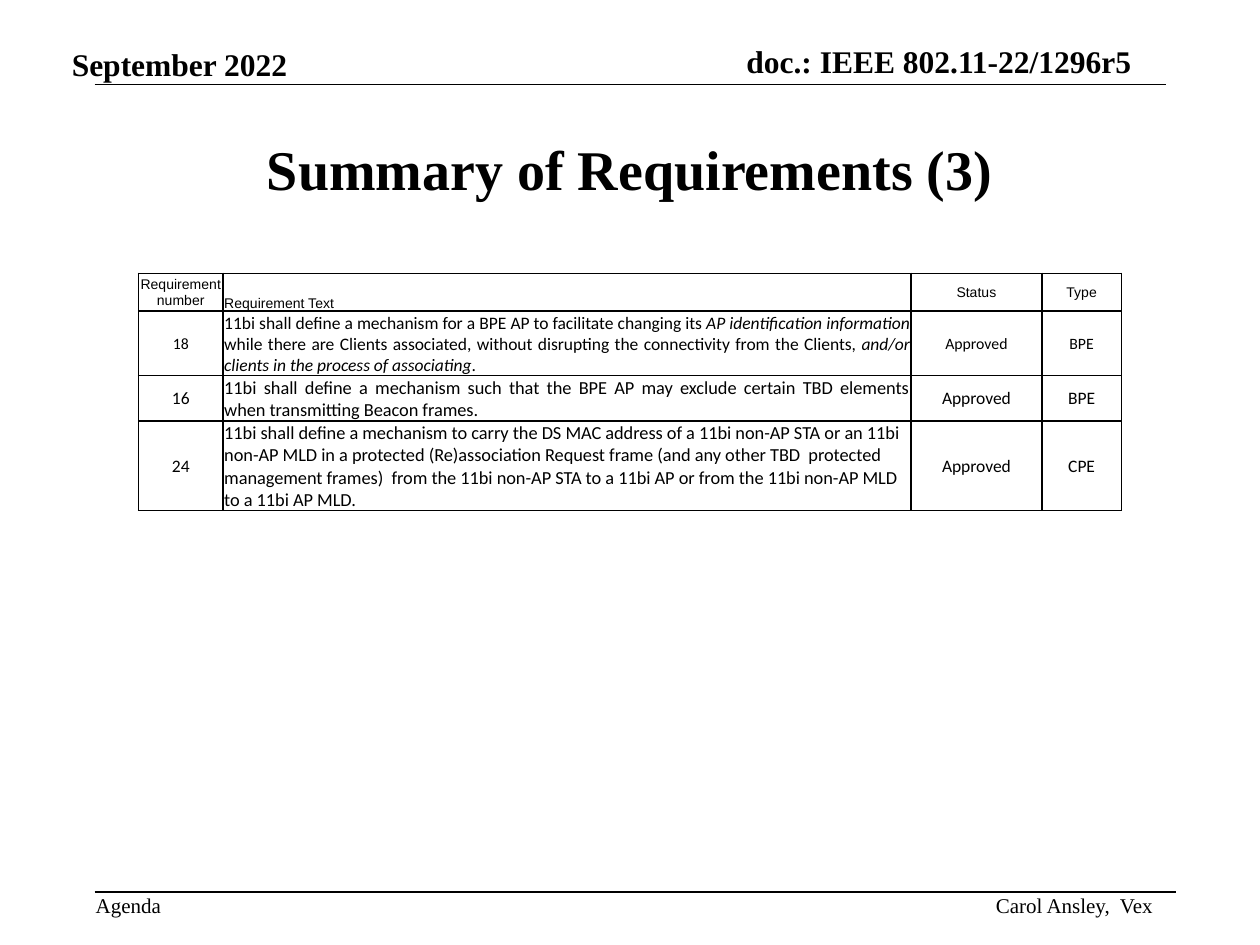
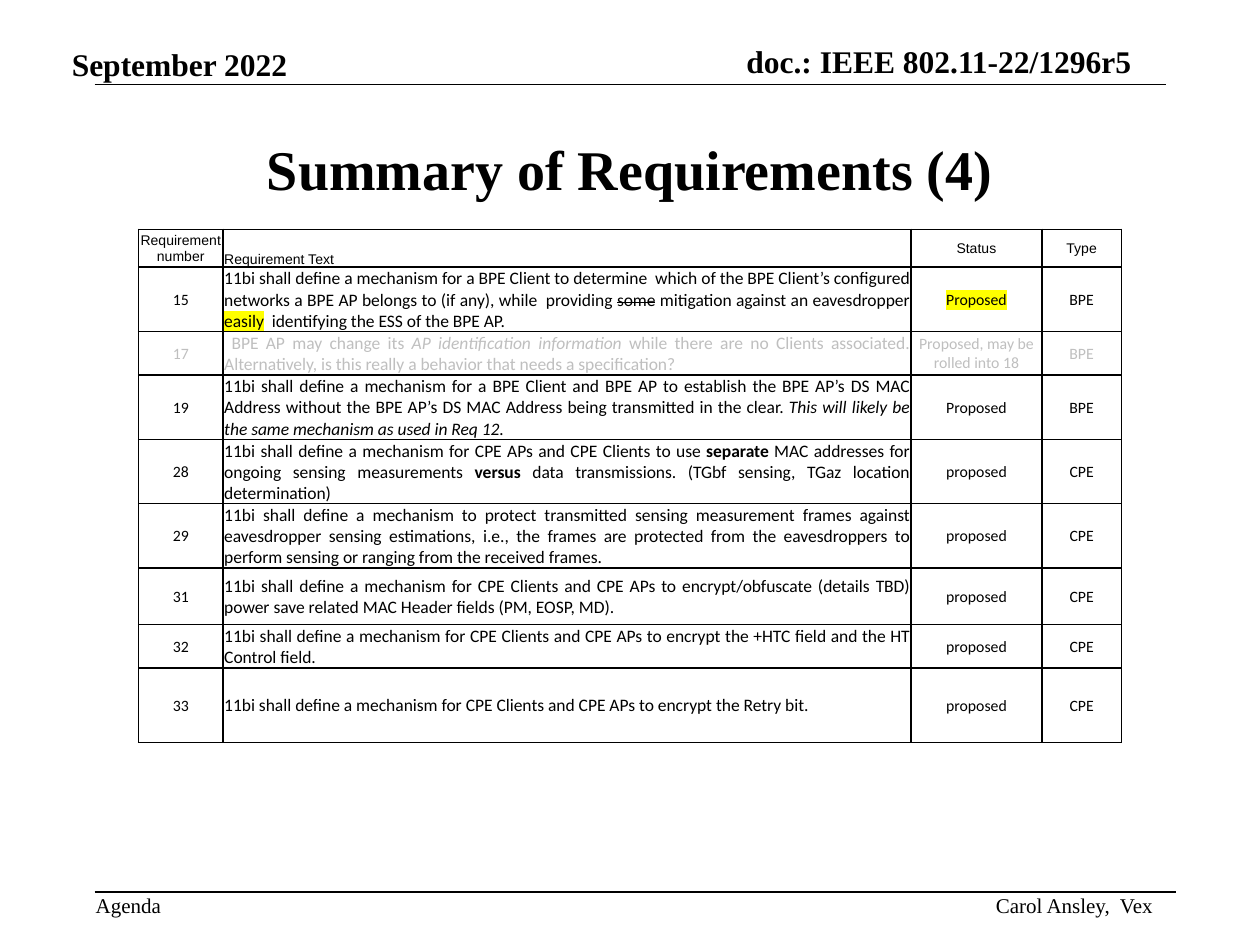
from copy import deepcopy
from lxml import etree
from pptx import Presentation
from pptx.dml.color import RGBColor
from pptx.enum import shapes, text
from pptx.oxml import ns
from pptx.util import Inches, Pt

BLACK, GREY, YELLOW = "000000", "BFBFBF", "FFFF00"
SERIF, SANS, BODY = "Times New Roman", "Arial", "Calibri"
LEFT, CENTER = text.PP_ALIGN.LEFT, text.PP_ALIGN.CENTER
RIGHT, JUST = text.PP_ALIGN.RIGHT, text.PP_ALIGN.JUSTIFY
TOP, MID, LOW = (text.MSO_ANCHOR.TOP, text.MSO_ANCHOR.MIDDLE,
                 text.MSO_ANCHOR.BOTTOM)

HEAD = {"size": Pt(18), "bold": True}
FOOT = {"size": Pt(12), "bold": False}
# words, left, top, width, height, align, anchor, format
LABELS = [
    ("September 2022", 0.57, 0.36, 1.73, 0.3, LEFT, LOW, HEAD),
    ("doc.: IEEE 802.11-22/1296r5", 5.88, 0.33, 3.1, 0.3, RIGHT, LOW, HEAD),
    ("Agenda", 0.76, 7.08, 0.53, 0.2, LEFT, TOP, FOOT),
    ("Carol Ansley,  Vex", 7.85, 7.08, 1.3, 0.2, RIGHT, LOW, FOOT),
]
RULES = [(0.75, 9.25, 0.67), (0.75, 9.33, 7.08)]

COLS = [0.67, 5.46, 1.04, 0.63]
HEADS = ["Requirement number", "Requirement Text", "Status", "Type"]
ITAL, BOLD = {"italic": True}, {"bold": True}
MARK, STRIKE = {"mark": YELLOW}, {"strike": True}
SMALL = {"sizes": (9, 10)}
LARGE = {"sizes": (10, 10.5)}
FADED = {"sizes": (9, 10), "color": GREY}
LOOSE = {"sizes": (10, 10.5), "align": LEFT, "anchor": LOW}

# Each row: height, number, text parts, status, type, look.
# A part is a plain string or a pair of string and format.
THIRD = [
    (0.45, "18", [
        "11bi shall define a mechanism for a BPE AP to facilitate changing its",
        (" AP identification information", ITAL),
        " while there are Clients associated, without disrupting the "
        "connectivity from the Clients, ",
        ("and/or clients in the process of associating", ITAL), "."],
     "Approved", "BPE", SMALL),
    (0.3, "16", [
        "11bi shall define a mechanism such that the BPE AP may exclude "
        "certain TBD elements when transmitting Beacon frames. "],
     "Approved", "BPE", LARGE),
    (0.3, "24", [
        "11bi shall define a mechanism to carry the DS MAC address of a 11bi "
        "non-AP STA or an 11bi non-AP MLD in a protected (Re)association "
        "Request frame (and any other TBD  protected management frames)  "
        "from the 11bi non-AP STA to a 11bi AP or from the 11bi non-AP MLD "
        "to a 11bi AP MLD."],
     "Approved", "CPE", LOOSE),
]
FOURTH = [
    (0.45, "15", [
        "11bi shall define a mechanism for a BPE Client to determine  which "
        "of the BPE Client’s configured networks a BPE AP belongs to "
        "(if any), while  providing ",
        ("some", STRIKE), " mitigation against an eavesdropper ",
        ("easily", MARK), "  identifying the ESS of the BPE AP."],
     ("Proposed", MARK), "BPE", SMALL),
    (0.3, "17", [
        " BPE AP may change its",
        (" AP identification information", ITAL),
        " while there are no Clients associated.\nAlternatively, is this "
        "really a behavior that needs a specification?"],
     "Proposed, may be rolled into 18", "BPE", FADED),
    (0.45, "19", [
        "11bi shall define a mechanism for a BPE Client and BPE AP to "
        "establish the BPE AP’s DS MAC Address without the BPE AP’s DS MAC "
        "Address being transmitted in the clear.",
        (" This will likely be the same mechanism as used in Req 12.", ITAL)],
     "Proposed", "BPE", SMALL),
    (0.3, "28", [
        "11bi shall define a mechanism for CPE APs and CPE Clients to use ",
        ("separate", BOLD),
        " MAC addresses for ongoing sensing measurements ",
        ("versus", BOLD),
        " data transmissions. (TGbf sensing, TGaz location determination)"],
     "proposed", "CPE", SMALL),
    (0.45, "29", [
        "11bi shall define a mechanism to protect transmitted sensing "
        "measurement frames against eavesdropper sensing estimations, i.e., "
        "the frames are protected from the eavesdroppers to perform sensing "
        "or ranging from the received frames."],
     "proposed", "CPE", SMALL),
    (0.45, "31", [
        "11bi shall define a mechanism for CPE Clients and CPE APs to "
        "encrypt/obfuscate (details TBD) power save related MAC Header "
        "fields (PM, EOSP, MD)."],
     "proposed", "CPE", SMALL),
    (0.3, "32", [
        "11bi shall define a mechanism for CPE Clients and CPE APs to "
        "encrypt the +HTC field and the HT Control field."],
     "proposed", "CPE", SMALL),
    (0.59, "33", [
        "11bi shall define a mechanism for CPE Clients and CPE APs to "
        "encrypt the Retry bit."],
     "proposed", "CPE", SMALL),
]


def tint(color, code):
    color.rgb = RGBColor.from_string(code)


def assign(target, values):
    for name, value in values.items():
        setattr(target, name, value)


def child(parent, tag, **attrs):
    return etree.SubElement(parent, ns.qn(tag), attrs)


def add_run(para, words, font, color=BLACK, mark=None, strike=False):
    run = para.add_run()
    run.text = words
    assign(run.font, font)
    tint(run.font.color, color)
    props = run.font._element
    if strike:
        props.set("strike", "sngStrike")
    if mark:
        light = child(props, "a:highlight")
        child(light, "a:srgbClr", val=mark)
        props.find(ns.qn("a:latin")).addprevious(light)
    return run


def set_frame(frame, align, anchor):
    """Remove the margins, place the text and return its paragraph."""
    sides = ("left", "right", "top", "bottom")
    assign(frame, {f"margin_{side}": 0 for side in sides})
    frame.vertical_anchor = anchor
    para = frame.paragraphs[0]
    para.alignment = align
    return para


def add_label(slide, words, left, top, width, height, align, anchor, font):
    box = slide.shapes.add_textbox(*map(Inches, (left, top, width, height)))
    para = set_frame(box.text_frame, align, anchor)
    assign(box.text_frame, {"word_wrap": False,
                            "auto_size": text.MSO_AUTO_SIZE.SHAPE_TO_FIT_TEXT})
    add_run(para, words, {"name": SERIF, **font})


def add_rule(slide, start, end, y):
    line = slide.shapes.add_connector(
        shapes.MSO_CONNECTOR.STRAIGHT, *map(Inches, (start, y, end, y)))
    tint(line.line.color, BLACK)
    line.line.width = Pt(1)
    child(line._element.spPr, "a:effectLst")


def set_title(slide, words):
    title = slide.shapes.title
    assign(title, {"left": Inches(0.75), "top": Inches(0.75),
                   "width": Inches(8.5), "height": Inches(1.17)})
    para = set_frame(title.text_frame, CENTER, MID)
    add_run(para, words, {"name": SERIF, "size": Pt(32), "bold": True})


def add_edges(cell):
    props = cell._tc.get_or_add_tcPr()
    for place, side in enumerate("LRTB"):
        edge = child(props, f"a:ln{side}", w=str(Pt(1)))
        child(child(edge, "a:solidFill"), "a:srgbClr", val=BLACK)
        props.insert(place, edge)


def fill_cell(cell, parts, size, align=CENTER, anchor=MID, name=BODY,
              color=BLACK):
    edge = Inches(0.01)
    assign(cell, {"margin_left": edge, "margin_right": edge,
                  "margin_top": edge, "margin_bottom": 0,
                  "vertical_anchor": anchor})
    cell.fill.background()
    add_edges(cell)
    para = cell.text_frame.paragraphs[0]
    para.alignment = align
    for part in parts:
        words, look = (part, {}) if isinstance(part, str) else part
        look = dict(look)
        font = {"name": name, "size": Pt(size),
                "bold": look.pop("bold", False),
                "italic": look.pop("italic", False)}
        run = None
        for piece in words.split("\n"):
            if run:
                para.add_line_break()
                para._p[-1].append(deepcopy(run.font._element))
            run = add_run(para, piece, font, color, **look)


def add_grid(slide, top, rows):
    heights = [0.3] + [row[0] for row in rows]
    grid = slide.shapes.add_table(
        len(heights), len(COLS), Inches(1.1), Inches(top),
        Inches(sum(COLS)), Inches(sum(heights))).table
    assign(grid, {"first_row": False, "horz_banding": False})
    for col, width in zip(grid.columns, COLS):
        col.width = Inches(width)
    for row, height in zip(grid.rows, heights):
        row.height = Inches(height)
    for col, words in enumerate(HEADS):
        place = (LEFT, LOW) if col == 1 else (CENTER, MID)
        fill_cell(grid.cell(0, col), [words], 8, *place, name=SANS)
    for index, (_, number, parts, status, kind, look) in enumerate(rows, 1):
        size, main_size = look["sizes"]
        color = look.get("color", BLACK)
        for col, words in ((0, number), (2, status), (3, kind)):
            fill_cell(grid.cell(index, col), [words], size, color=color)
        fill_cell(grid.cell(index, 1), parts, main_size,
                  look.get("align", JUST), look.get("anchor", MID),
                  color=color)


def add_page(deck, title, top, rows):
    slide = deck.slides.add_slide(deck.slide_layouts[5])
    for label in LABELS:
        add_label(slide, *label)
    for rule in RULES:
        add_rule(slide, *rule)
    set_title(slide, title)
    add_grid(slide, top, rows)


def main():
    deck = Presentation()
    assign(deck, {"slide_width": Inches(10), "slide_height": Inches(7.5)})
    add_page(deck, "Summary of Requirements (3)", 2.17, THIRD)
    add_page(deck, "Summary of Requirements (4)", 1.82, FOURTH)
    deck.save("out.pptx")


if __name__ == "__main__":
    main()
